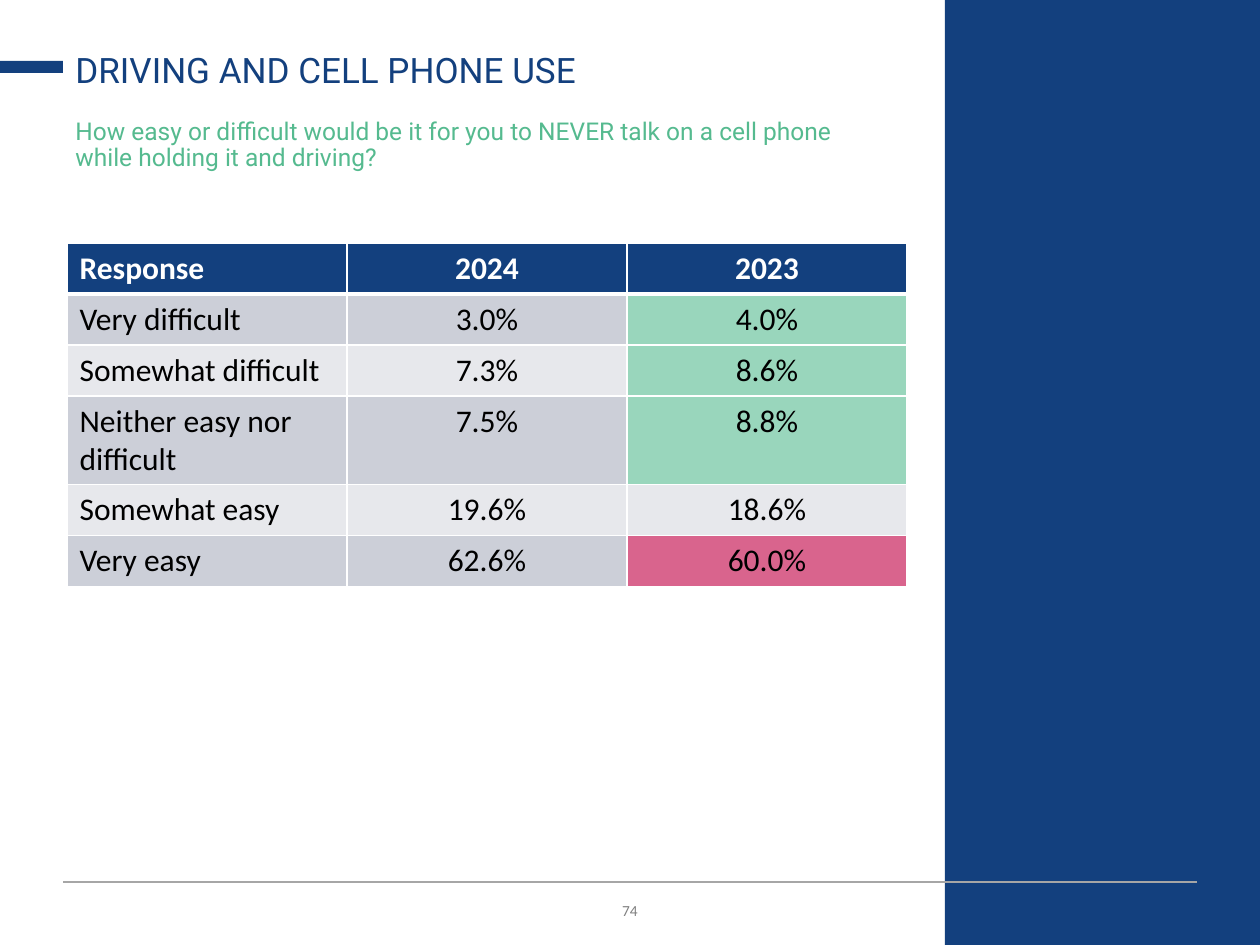
from dataclasses import dataclass

from lxml.etree import SubElement
from pptx import Presentation
from pptx.dml.color import RGBColor
from pptx.enum.shapes import MSO_CONNECTOR, MSO_SHAPE
from pptx.enum.text import MSO_ANCHOR, PP_ALIGN
from pptx.oxml.ns import qn
from pptx.util import Emu, Pt

PX_PER_INCH = 126


def px(n):
    return Emu(round(n * 914400 / PX_PER_INCH))


@dataclass(frozen=True)
class Theme:
    navy: str = "13407E"
    green: str = "55BA8F"
    mint: str = "99D6BC"
    pink: str = "D9648D"
    band_dark: str = "CCCFD8"
    band_light: str = "E7E8EC"
    rule: str = "A6A6A6"
    muted: str = "808080"
    white: str = "FFFFFF"
    black: str = "000000"
    heading_font: str = "Roboto"
    body_font: str = "Calibri"
    title_size: int = 20
    question_size: int = 14
    table_size: int = 18
    number_size: int = 11


class SlideBuilder:
    def __init__(self, slide, theme):
        self.s = slide
        self.theme = theme

    def run(self, p, text, font, size, color, bold=False):
        r = p.add_run()
        r.text = text
        r.font.name = font
        r.font.size = Pt(size)
        r.font.bold = bold
        r.font.color.rgb = RGBColor.from_string(color)
        return r

    def block(self, x, y, w, h, color):
        """Add a plain filled rectangle."""
        sp = self.s.shapes.add_shape(MSO_SHAPE.RECTANGLE, px(x), px(y), px(w), px(h))
        sp.shadow.inherit = False
        sp.fill.solid()
        sp.fill.fore_color.rgb = RGBColor.from_string(color)
        sp.line.fill.background()

    def line(self, x1, y1, x2, y2, color, width):
        ln = self.s.shapes.add_connector(
            MSO_CONNECTOR.STRAIGHT, px(x1), px(y1), px(x2), px(y2))
        ln.line.color.rgb = RGBColor.from_string(color)
        ln.line.width = Pt(width)
        SubElement(ln._element.spPr, qn("a:effectLst"))

    def text(self, x, y, w, h, text, font, size, color,
             align=PP_ALIGN.LEFT, anchor=MSO_ANCHOR.TOP, spacing=1.0):
        tf = self.s.shapes.add_textbox(px(x), px(y), px(w), px(h)).text_frame
        tf.word_wrap = True
        tf.vertical_anchor = anchor
        p = tf.paragraphs[0]
        p.alignment = align
        p.line_spacing = spacing
        return self.run(p, text, font, size, color)

    def borders(self, cell, color, top, bottom):
        """Draw all four cell edges; the side edges are 1 pt wide."""
        tc_pr = cell._tc.get_or_add_tcPr()
        for tag, width in (("lnL", 1), ("lnR", 1), ("lnT", top), ("lnB", bottom)):
            ln = SubElement(tc_pr, qn(f"a:{tag}"), w=str(Pt(width)))
            SubElement(SubElement(ln, qn("a:solidFill")), qn("a:srgbClr"), val=color)

    def table(self, x, y, col_w, row_h, rows, highlights):
        """Add a banded table; highlights maps (row, column) to a fill."""
        t = self.theme
        n_rows, n_cols = len(rows), len(rows[0])
        table = self.s.shapes.add_table(
            n_rows, n_cols, px(x), px(y), px(col_w * n_cols), px(row_h * n_rows)).table
        for i, row in enumerate(rows):
            header = i == 0
            band = t.navy if header else t.band_dark if i % 2 else t.band_light
            for j, value in enumerate(row):
                cell = table.cell(i, j)
                self.borders(cell, t.white, 3 if i == 1 else 1, 3 if header else 1)
                cell.fill.solid()
                cell.fill.fore_color.rgb = RGBColor.from_string(
                    highlights.get((i, j), band))
                p = cell.text_frame.paragraphs[0]
                p.alignment = PP_ALIGN.CENTER if j else PP_ALIGN.LEFT
                self.run(p, value, t.body_font, t.table_size,
                         t.white if header else t.black, header)


RESPONSES = [
    ("Response", "2024", "2023"),
    ("Very difficult", "3.0%", "4.0%"),
    ("Somewhat difficult", "7.3%", "8.6%"),
    ("Neither easy nor difficult", "7.5%", "8.8%"),
    ("Somewhat easy", "19.6%", "18.6%"),
    ("Very easy", "62.6%", "60.0%"),
]


def main():
    prs = Presentation()
    prs.slide_width, prs.slide_height = px(1260), px(945)
    t = Theme()
    b = SlideBuilder(prs.slides.add_slide(prs.slide_layouts[6]), t)

    number = b.text(63, 890, 1134, 38, "74", t.body_font, t.number_size, t.muted,
                    align=PP_ALIGN.CENTER, anchor=MSO_ANCHOR.MIDDLE)
    number.font._element.set("cap", "small")
    b.block(945, 0, 315, 945, t.navy)
    b.line(63, 882, 1197, 882, t.rule, 0.75)
    b.block(0, 61, 63, 12, t.navy)

    b.text(63, 113, 844, 84,
           "How easy or difficult would be it for you to NEVER talk on a cell phone "
           "while holding it and driving?",
           t.heading_font, t.question_size, t.green, spacing=0.9)
    b.text(63, 37, 844, 60, "DRIVING AND CELL PHONE USE",
           t.heading_font, t.title_size, t.navy, anchor=MSO_ANCHOR.BOTTOM, spacing=0.9)

    highlights = {(i, 2): t.mint for i in (1, 2, 3)} | {(5, 2): t.pink}
    b.table(67, 243, 280, 51, RESPONSES, highlights)
    prs.save("out.pptx")


if __name__ == "__main__":
    main()
